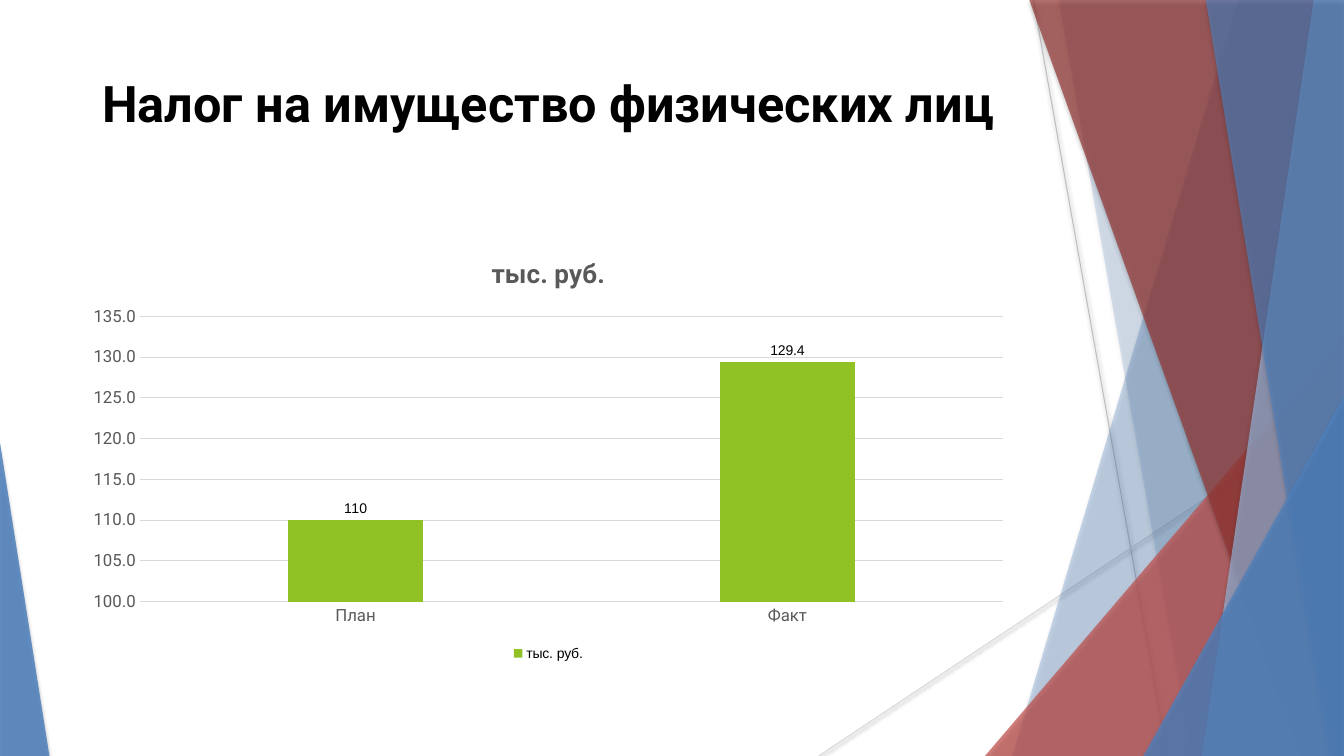
from dataclasses import dataclass

import lxml.etree
import pptx
import pptx.chart.data
import pptx.dml.color
import pptx.enum.chart
import pptx.enum.shapes
import pptx.enum.text
import pptx.oxml.ns
import pptx.util

RGBColor = pptx.dml.color.RGBColor
BLACK = RGBColor(0x00, 0x00, 0x00)
GREY = RGBColor(0x59, 0x59, 0x59)
SILVER = RGBColor(0xBF, 0xBF, 0xBF)
PALE = RGBColor(0xD9, 0xD9, 0xD9)
BLUE = RGBColor(0x4F, 0x81, 0xBD)
LIGHT_BLUE = RGBColor(0x95, 0xB3, 0xD7)
RED = RGBColor(0xC0, 0x50, 0x4D)
DARK_RED = RGBColor(0x95, 0x37, 0x35)
GREEN = RGBColor(0x90, 0xC2, 0x26)

WIDTH, HEIGHT = pptx.util.Inches(13.33), pptx.util.Inches(7.5)
HEADING_FONT, BODY_FONT = "Roboto", "Arial"
LEFT, SPAN = 5.55, 70.52  # shared by title and chart, in % of slide width


@dataclass(frozen=True)
class Ray:
    x1: float
    y1: float
    x2: float
    y2: float
    color: RGBColor


@dataclass(frozen=True)
class Band:
    """Full-height facet from a slanted left edge to the slide's right edge."""
    top_x: float
    foot_x: float
    color: RGBColor
    opacity: int


@dataclass(frozen=True)
class Corner:
    """Triangle standing on the slide's bottom edge, apex at share `apex`."""
    left: float
    width: float
    top: float
    apex: float
    color: RGBColor
    opacity: int


RAYS = [
    Ray(76.89, 0, 86.87, 100, SILVER),
    Ray(100, 53.73, 60.92, 100, PALE),
]
FACETS = [
    Band(92.12, 75.32, BLUE, 30),
    Band(78.77, 88.67, BLUE, 20),
    Corner(73.29, 26.71, 44.4, 1, RED, 72),
    Band(76.59, 96.85, DARK_RED, 70),
    Band(97.75, 89.42, LIGHT_BLUE, 70),
    Band(89.72, 98.87, BLUE, 65),
    Corner(85.07, 14.93, 52.4, 1, BLUE, 80),
    Corner(0, 3.68, 58.53, 0, BLUE, 85),
]


def across(share: float) -> int:
    return round(WIDTH * share / 100)


def down(share: float) -> int:
    return round(HEIGHT * share / 100)


def child(parent, tag: str, **attrs):
    el = lxml.etree.SubElement(parent, pptx.oxml.ns.qn(tag))
    for name, value in attrs.items():
        el.set(name, str(value))
    return el


def add_shadow(sp_pr, opacity: int, blur: float, distance: float) -> None:
    effects = child(sp_pr, "a:effectLst")
    shadow = child(effects, "a:outerShdw", blurRad=pptx.util.Pt(blur),
                   dist=pptx.util.Pt(distance), dir=90 * 60000, rotWithShape=0)
    color = child(shadow, "a:srgbClr", val=BLACK)
    child(color, "a:alpha", val=opacity * 1000)


def draw_ray(shapes, ray: Ray) -> None:
    line = shapes.add_connector(
        pptx.enum.shapes.MSO_CONNECTOR.STRAIGHT,
        across(ray.x1), down(ray.y1), across(ray.x2), down(ray.y2))
    line.line.color.rgb = ray.color
    line.line.width = pptx.util.Pt(0.75)
    add_shadow(line._element.spPr, 38, 3.1, 1.6)


def draw_facet(shapes, facet: Band | Corner) -> None:
    if isinstance(facet, Band):
        outline = shapes.build_freeform(across(facet.top_x), 0)
        outline.add_line_segments(
            [(WIDTH, 0), (WIDTH, HEIGHT), (across(facet.foot_x), HEIGHT)])
        sp = outline.convert_to_shape()
    else:
        sp = shapes.add_shape(
            pptx.enum.shapes.MSO_SHAPE.ISOSCELES_TRIANGLE,
            across(facet.left), down(facet.top),
            across(facet.width), down(100 - facet.top))
        sp.adjustments[0] = facet.apex
    sp.fill.solid()
    sp.fill.fore_color.rgb = facet.color
    color = sp._element.spPr.find(".//" + pptx.oxml.ns.qn("a:srgbClr"))
    child(color, "a:alpha", val=facet.opacity * 1000)
    sp.line.fill.background()
    add_shadow(sp._element.spPr, 35, 3, 2)


def set_font(font, name: str, size: float, color: RGBColor, bold: bool = False) -> None:
    font.name, font.size, font.bold = name, pptx.util.Pt(size), bold
    font.color.rgb = color


def fill_title(shapes, text: str) -> None:
    title = shapes.title
    title.left, title.top = across(LEFT), down(8.93)
    title.width, title.height = across(SPAN), down(19.2)
    tf = title.text_frame
    tf.text = text
    tf.word_wrap = True
    tf.auto_size = pptx.enum.text.MSO_AUTO_SIZE.NONE
    tf.vertical_anchor = pptx.enum.text.MSO_ANCHOR.TOP
    p = tf.paragraphs[0]
    p.alignment = pptx.enum.text.PP_ALIGN.CENTER
    set_font(p.font, HEADING_FONT, 36, BLACK, True)
    shapes._spTree.append(title._element)  # bring in front of the facets


def style_axis(axis, line) -> None:
    axis.major_tick_mark = pptx.enum.chart.XL_TICK_MARK.NONE
    axis.minor_tick_mark = pptx.enum.chart.XL_TICK_MARK.NONE
    set_font(axis.tick_labels.font, HEADING_FONT, 12, GREY)
    line.color.rgb = PALE
    line.width = pptx.util.Pt(0.75)


def add_tax_chart(shapes) -> None:
    data = pptx.chart.data.CategoryChartData()
    data.categories = ["План", "Факт"]
    data.add_series("тыс. руб.", [110, 129.4])
    chart = shapes.add_chart(
        pptx.enum.chart.XL_CHART_TYPE.COLUMN_CLUSTERED,
        across(LEFT), down(31.47), across(SPAN), down(56.53), data).chart
    set_font(chart.font, BODY_FONT, 10, BLACK)

    chart.has_title = True
    tf = chart.chart_title.text_frame
    tf.text = "тыс. руб."
    set_font(tf.paragraphs[0].font, HEADING_FONT, 18.6, GREY, True)
    chart.chart_title.include_in_layout = False
    chart.has_legend = True
    chart.legend.position = pptx.enum.chart.XL_LEGEND_POSITION.BOTTOM
    chart.legend.include_in_layout = False

    cat, val = chart.category_axis, chart.value_axis
    style_axis(cat, cat.format.line)
    style_axis(val, val.major_gridlines.format.line)
    val.format.line.fill.background()
    val.minimum_scale, val.maximum_scale, val.major_unit = 100, 135, 5
    val.tick_labels.number_format = "0.0"
    val.tick_labels.number_format_is_linked = False

    plot = chart.plots[0]
    plot.vary_by_categories = False
    plot.gap_width, plot.overlap = 219, -27
    series = plot.series[0]
    series.format.fill.solid()
    series.format.fill.fore_color.rgb = GREEN
    labels = series.data_labels
    labels.show_value = True
    labels.position = pptx.enum.chart.XL_LABEL_POSITION.OUTSIDE_END


def main() -> None:
    prs = pptx.Presentation()
    prs.slide_width, prs.slide_height = WIDTH, HEIGHT
    shapes = prs.slides.add_slide(prs.slide_layouts.get_by_name("Title Only")).shapes
    for ray in RAYS:
        draw_ray(shapes, ray)
    for facet in FACETS:
        draw_facet(shapes, facet)
    fill_title(shapes, "Налог на имущество физических лиц")
    add_tax_chart(shapes)
    prs.save("out.pptx")


if __name__ == "__main__":
    main()
